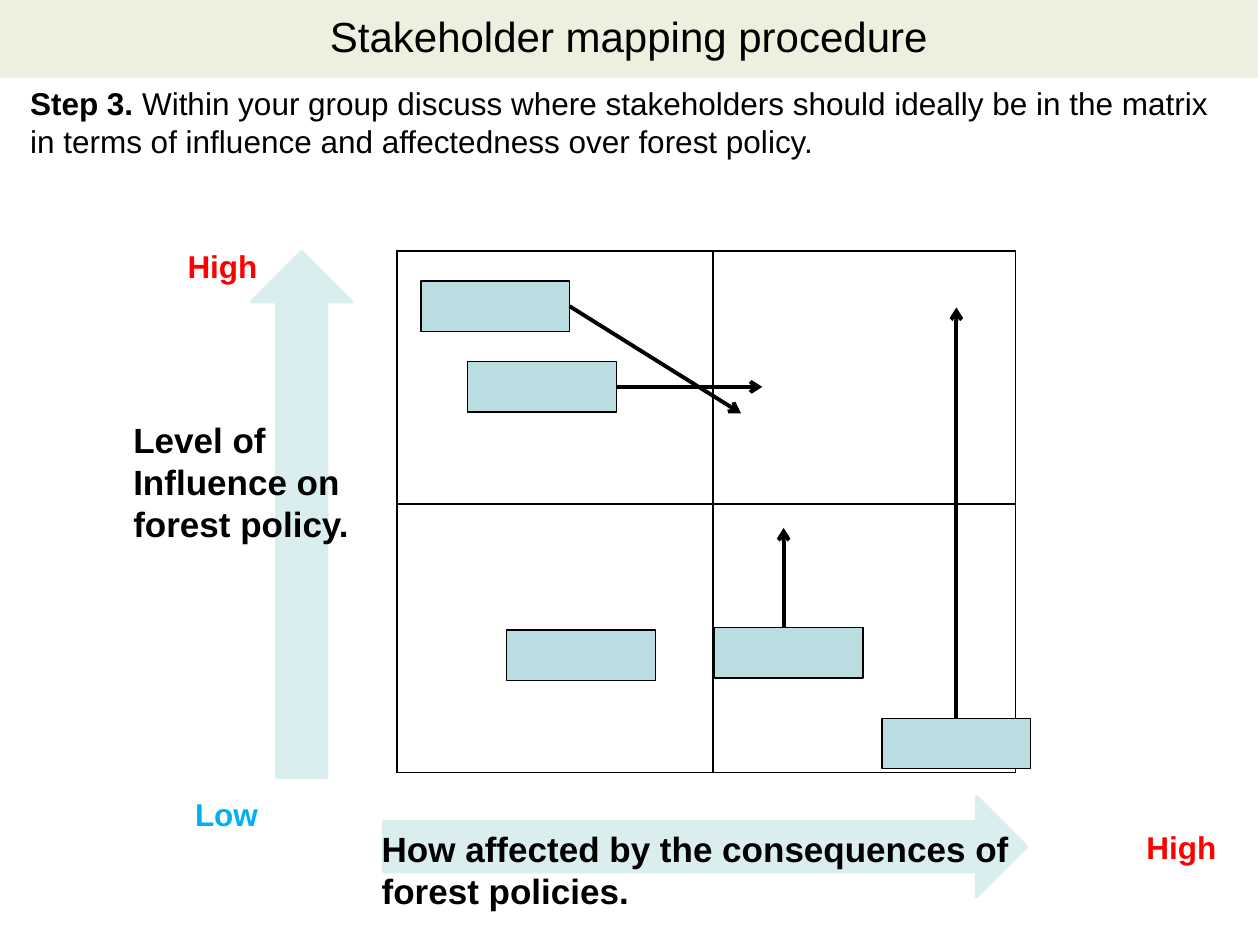
from dataclasses import dataclass

from lxml import etree
from pptx import Presentation
from pptx.dml.color import RGBColor
from pptx.enum.shapes import MSO_CONNECTOR, MSO_SHAPE
from pptx.enum.text import MSO_ANCHOR, PP_ALIGN
from pptx.oxml.ns import qn
from pptx.util import Pt

RECT, UP = MSO_SHAPE.RECTANGLE, MSO_SHAPE.UP_ARROW
LINE = MSO_CONNECTOR.STRAIGHT
TOP, CENTER = MSO_ANCHOR.TOP, PP_ALIGN.CENTER
NORTH, EAST = 0, 3


@dataclass(frozen=True)
class Theme:
    """Colours, font and type sizes of the slide."""
    ink: str = "000000"
    paper: str = "FFFFFF"
    band: str = "EBF1DE"
    card: str = "BADDE1"
    axis: str = "DAEDEF"
    high: str = "FF0000"
    low: str = "00B0F0"
    font: str = "Arial"
    title: int = 24
    label: int = 20
    body: int = 18


THEME = Theme()


def rgb(code):
    """Turn a hex code into a colour."""
    return RGBColor.from_string(code)


def place(box):
    """Turn a box in points into lengths."""
    return [Pt(v) for v in box]


def style(run, size, color, bold=False):
    """Set the font of a run."""
    font = run.font
    font.name, font.size, font.bold = THEME.font, Pt(size), bold
    font.color.rgb = rgb(color)


def add_text(slide, box, parts, size, color=THEME.ink):
    """Add a wrapped text box from pairs of text and boldness."""
    frame = slide.shapes.add_textbox(*place(box)).text_frame
    frame.word_wrap = True
    for text, bold in parts:
        run = frame.paragraphs[0].add_run()
        run.text = text
        style(run, size, color, bold)


def add_block(slide, kind, box, fill, line, width):
    """Add a flat filled shape with an outline."""
    shape = slide.shapes.add_shape(kind, *place(box))
    shape.shadow.inherit = False
    shape.fill.solid()
    shape.fill.fore_color.rgb = rgb(fill)
    shape.line.color.rgb = rgb(line)
    shape.line.width = Pt(width)
    return shape


def add_title(slide, box, text):
    """Lay out the title as a tinted band."""
    title = slide.shapes.title
    title.left, title.top, title.width, title.height = place(box)
    title.fill.solid()
    title.fill.fore_color.rgb = rgb(THEME.band)
    frame = title.text_frame
    frame.text = text
    frame.vertical_anchor = TOP
    frame.margin_top = Pt(6)
    frame.paragraphs[0].alignment = CENTER
    style(frame.paragraphs[0].runs[0], THEME.title, THEME.ink)


def edge_cell(cell):
    """Give a cell thin borders and a plain fill."""
    props = cell._tc.get_or_add_tcPr()
    for side in ("a:lnL", "a:lnR", "a:lnT", "a:lnB"):
        edge = etree.SubElement(props, qn(side), w=str(Pt(1)))
        fill = etree.SubElement(edge, qn("a:solidFill"))
        etree.SubElement(fill, qn("a:srgbClr"), val=THEME.ink)
    cell.fill.solid()
    cell.fill.fore_color.rgb = rgb(THEME.paper)


def add_grid(slide, box, cols, rows):
    """Draw the empty matrix as a table."""
    table = slide.shapes.add_table(len(rows), len(cols), *place(box)).table
    table.first_row = table.horz_banding = False
    for col, width in zip(table.columns, cols):
        col.width = Pt(width)
    for row, height in zip(table.rows, rows):
        row.height = Pt(height)
    for cell in table.iter_cells():
        edge_cell(cell)


def add_move(slide, start, end, card=None, site=None):
    """Draw an arrow, joined to its card when a site is given."""
    wire = slide.shapes.add_connector(LINE, *place(start + end))
    if site is not None:
        wire.begin_connect(card, site)
    wire.line.color.rgb = rgb(THEME.ink)
    wire.line.width = Pt(2.25)
    etree.SubElement(wire.line._get_or_add_ln(), qn("a:tailEnd"), type="arrow")
    etree.SubElement(wire._element.spPr, qn("a:effectLst"))


def add_matrix(slide, box):
    """Draw the matrix, its stakeholder cards and their moves."""
    left, top, width, height = box
    wide, high = 85, 28.8
    add_grid(slide, box, (180.7, width - 180.7), (144.7, height - 144.7))
    spots = ((13.7, 17.3), (40.3, 63.4), (181.4, 215.3),
             (62.6, 216.7), (277.2, 267.1))
    cards = [add_block(slide, RECT, (left + x, top + y, wide, high),
                       THEME.card, THEME.ink, 0.75) for x, y in spots]
    moves = ((0, (98.7, 31.7), (196.6, 92.9), EAST),
             (1, (125.3, 77.8), (208.8, 77.8), EAST),
             (2, (221, 215.3), (221, 158.4), None),
             (4, (319.7, 267.1), (319.7, 32.4), NORTH))
    for index, (ax, ay), (bx, by), site in moves:
        add_move(slide, (left + ax, top + ay), (left + bx, top + by),
                 cards[index], site)


def add_axis(slide, box, turn, label, text):
    """Draw an axis arrow with its label, placed from the box corner."""
    left, top, width, height = box
    arrow = add_block(slide, UP, box, THEME.axis, THEME.axis, 2)
    arrow.rotation = turn
    x, y, wide, high = label
    add_text(slide, (left + x, top + y, wide, high), [(text, True)], THEME.label)


def main():
    """Build and save the slide."""
    deck = Presentation()
    deck.slide_width, deck.slide_height = Pt(720), Pt(540)
    slide = deck.slides.add_slide(deck.slide_layouts[5])
    add_title(slide, (0, 0, 718.6, 44.6), "Stakeholder mapping procedure")
    add_matrix(slide, (226.8, 143.3, 353.5, 298.1))
    ends = (("Low", 104.4, 450.7, THEME.low),
            ("High", 100.1, 137.5, THEME.high),
            ("High", 648, 469.4, THEME.high))
    for text, x, y, color in ends:
        add_text(slide, (x, y, 79.2, 28.8), [(text, True)], THEME.body, color)
    add_text(slide, (10.1, 44.6, 697.7, 51.1), [
        ("Step 3. ", True),
        ("Within your group discuss where stakeholders should ideally be in "
         "the matrix in terms of influence and affectedness over forest "
         "policy.", False)], THEME.body)
    add_axis(slide, (144, 144, 56.9, 300.2), 0, (-74.9, 91.4, 141.8, 79.9),
             "Level of Influence on forest policy.")
    add_axis(slide, (374.4, 300.2, 56.9, 367.2), 90,
             (-163.4, 169.2, 404.6, 55.4),
             "How affected by the consequences of forest policies.")
    deck.save("out.pptx")


if __name__ == "__main__":
    main()
